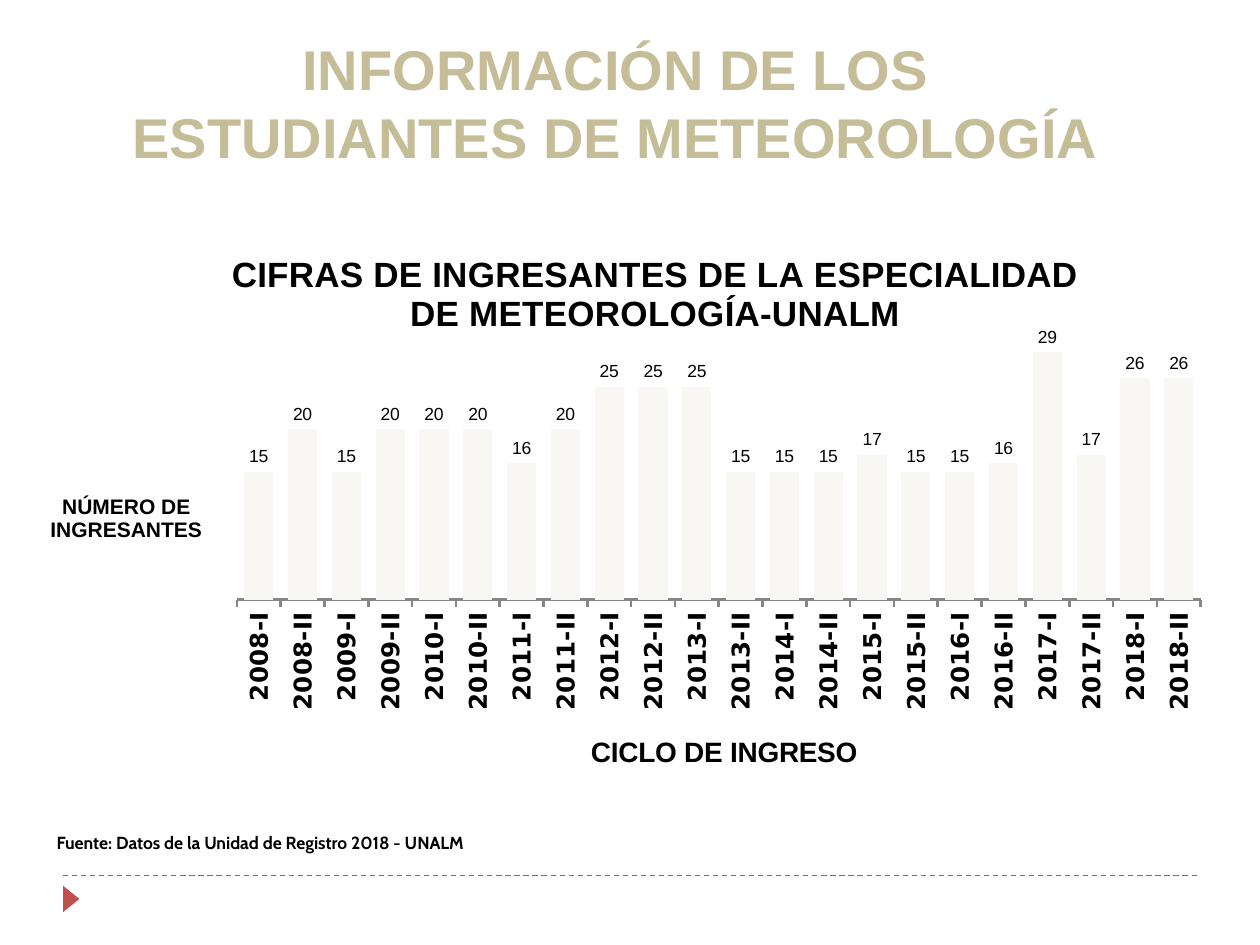
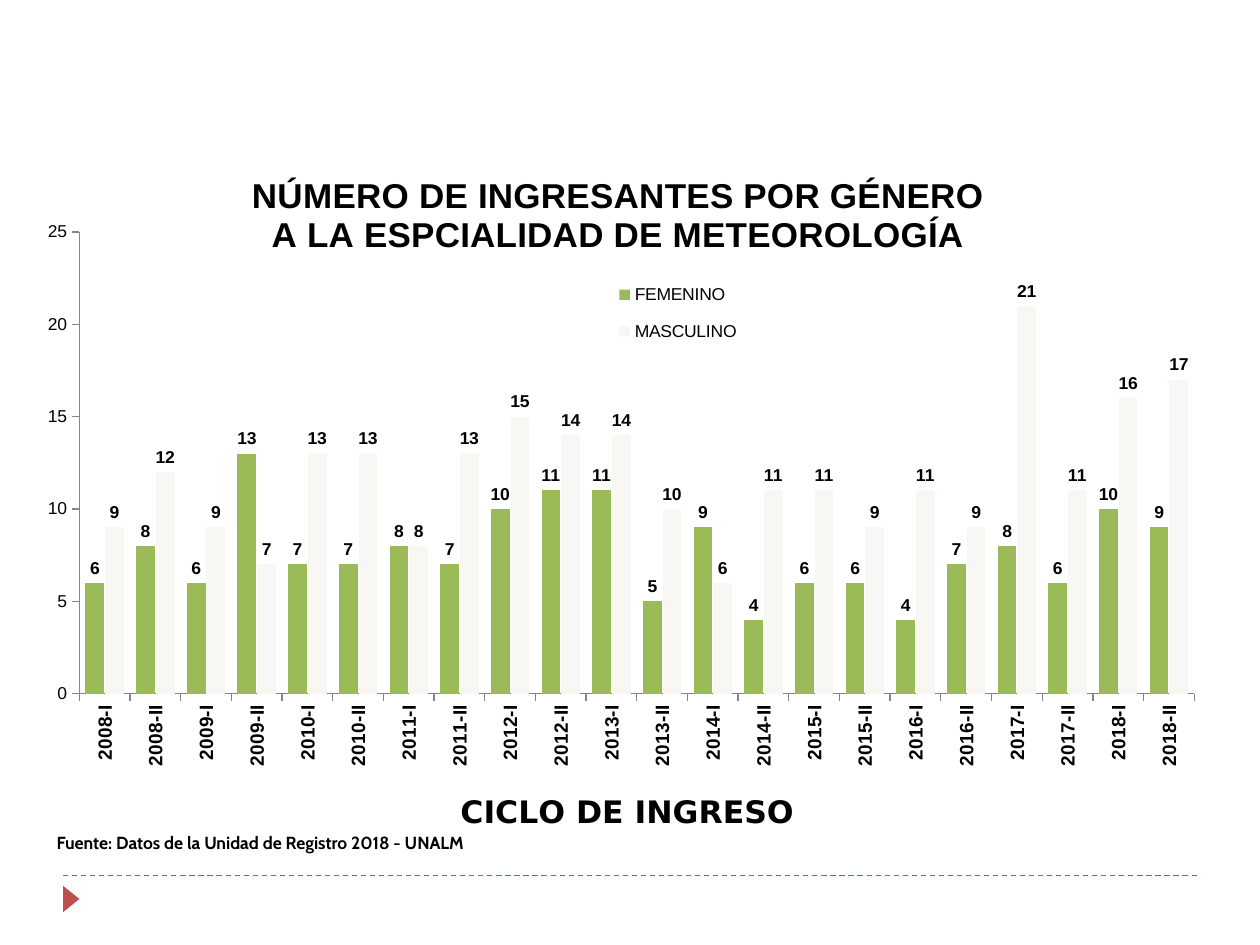
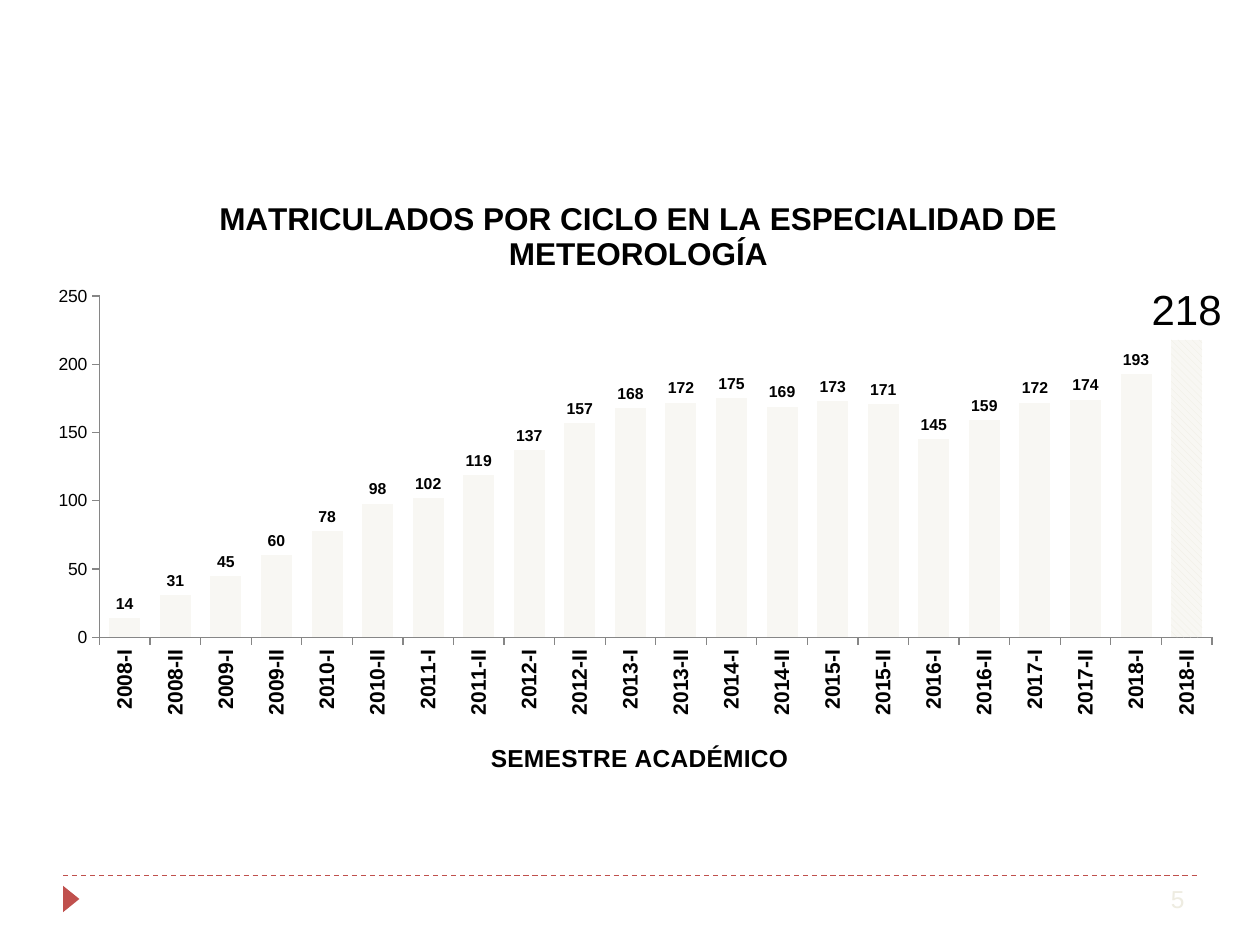
import lxml.etree
import pptx
import pptx.chart.data
import pptx.dml.color
import pptx.enum.chart
import pptx.enum.dml
import pptx.enum.shapes
import pptx.enum.text
import pptx.oxml.ns
import pptx.util

COLS, ROWS = 100, 75
WIDE, HIGH = pptx.util.Inches(10), pptx.util.Inches(7.5)
BLACK, RED, SAND, PALE, GREEN, GREY, CREAM = (
    "000000", "C0504D", "C4BD97", "F8F7F3", "9BBB59", "868686", "EEECE1")
FONT, NOTE, PLAIN = "Arial", "Cabin", "DejaVu Sans"
TERMS = [f"{year}-{half}" for year in range(2008, 2019) for half in ("I", "II")]
SOURCE = "Fuente: Datos de la Unidad de Registro 2018 - UNALM"


def color(code):
    """Turn a hex string into a colour."""
    return pptx.dml.color.RGBColor.from_string(code)


def place(x, y, w, h):
    """Turn grid columns and rows into slide lengths."""
    return [int(WIDE * x / COLS), int(HIGH * y / ROWS),
            int(WIDE * w / COLS), int(HIGH * h / ROWS)]


def style(font, size, bold=False, name=FONT, code=BLACK):
    """Set the looks of a font."""
    font.size, font.bold, font.name = pptx.util.Pt(size), bold, name
    font.color.rgb = color(code)


def write(slide, box, text, align, size, bold=True, name=FONT, code=BLACK):
    """Add a line of text in a box."""
    frame = slide.shapes.add_textbox(*place(*box)).text_frame
    frame.word_wrap = True
    frame.vertical_anchor = pptx.enum.text.MSO_ANCHOR.MIDDLE
    para = frame.paragraphs[0]
    para.text, para.alignment = text, align
    style(para.font, size, bold, name, code)


def footer(slide):
    """Draw the dashed rule and the marker below it."""
    left, top, wide, _ = place(5, 69.5, 90, 0)
    rule = slide.shapes.add_connector(
        pptx.enum.shapes.MSO_CONNECTOR.STRAIGHT, left, top, left + wide, top)
    rule.line.color.rgb = color(RED)
    rule.line.width = pptx.util.Pt(0.75)
    rule.line.dash_style = pptx.enum.dml.MSO_LINE.DASH
    lxml.etree.SubElement(rule._element.spPr, pptx.oxml.ns.qn("a:effectLst"))
    mark = slide.shapes.add_shape(
        pptx.enum.shapes.MSO_SHAPE.ISOSCELES_TRIANGLE, *place(4.6, 70.7, 2.1, 1.3))
    mark.rotation = 90
    mark.shadow.inherit = False
    mark.fill.solid()
    mark.fill.fore_color.rgb = color(RED)
    mark.line.fill.background()


def credit(slide):
    """Write where the data come from."""
    write(slide, (3.5, 65.5, 40.9, 2.7), SOURCE,
          pptx.enum.text.PP_ALIGN.LEFT, 10, name=NOTE)


def arrange(node, index, box, part, inner=False):
    """Pin a chart part at its offset within the chart box."""
    tag = pptx.oxml.ns.qn
    for old in node.findall(tag("c:layout")):
        node.remove(old)
    layout = lxml.etree.Element(tag("c:layout"))
    manual = lxml.etree.SubElement(layout, tag("c:manualLayout"))
    pairs = [("layoutTarget", "inner")] if inner else []
    pairs += [("xMode", "edge"), ("yMode", "edge")]
    sizes = (box[2], box[3], box[2], box[3])
    pairs += [(key, f"{at / size:.4f}") for key, at, size in zip("xywh", part, sizes)]
    for key, value in pairs:
        lxml.etree.SubElement(manual, tag(f"c:{key}")).set("val", value)
    node.insert(index, layout)


def head(owner, box, spot, text, size, name=FONT):
    """Give a chart or an axis its title."""
    title = owner.chart_title if hasattr(owner, "chart_title") else owner.axis_title
    title.text_frame.text = text
    for para in title.text_frame.paragraphs:
        style(para.font, size, True, name)
    arrange(title._element, 1, box, spot)
    return title


def turn(body, angle):
    """Turn the text of a chart part by degrees."""
    body.set("rot", str(angle * 60000))
    body.set("vert", "horz")


def columns(slide, box, plot, series, gap, overlap, top, step, label):
    """Add a column chart with its plot pinned in the box."""
    data = pptx.chart.data.CategoryChartData(number_format="0")
    data.categories = TERMS
    for name, _, values in series:
        data.add_series(name, values)
    chart = slide.shapes.add_chart(
        pptx.enum.chart.XL_CHART_TYPE.COLUMN_CLUSTERED, *place(*box), data).chart
    style(chart.font, 10)
    chart.has_legend = False
    bars = chart.plots[0]
    bars.gap_width, bars.overlap, bars.vary_by_categories = gap, overlap, False
    for item, (_, code, _) in zip(bars.series, series):
        item.format.fill.solid()
        item.format.fill.fore_color.rgb = color(code)
        item.invert_if_negative = False
        tags = item.data_labels
        tags.show_value = True
        tags.position = pptx.enum.chart.XL_LABEL_POSITION.OUTSIDE_END
        style(tags.font, *label)
    scale = chart.value_axis
    scale.minimum_scale, scale.maximum_scale, scale.major_unit = 0, top, step
    scale.has_major_gridlines = False
    for axis in (chart.category_axis, scale):
        axis.major_tick_mark = pptx.enum.chart.XL_TICK_MARK.OUTSIDE
        axis.format.line.color.rgb = color(GREY)
        axis.format.line.width = pptx.util.Pt(0.75)
    arrange(chart._chartSpace.chart.plotArea, 0, box, plot, True)
    return chart


def base(chart, box, spot, text, size, tick, name=FONT, face=FONT):
    """Style the term axis with upright labels and a title."""
    axis = chart.category_axis
    style(axis.tick_labels.font, tick, True, face)
    turn(axis._element.find(".//" + pptx.oxml.ns.qn("a:bodyPr")), -90)
    head(axis, box, spot, text, size, name)


def intake(slide):
    """Show the intake by term."""
    box = (2.5, 17.8, 94.7, 44.5)
    counts = (15, 20, 15, 20, 20, 20, 16, 20, 25, 25, 25,
              15, 15, 15, 17, 15, 15, 16, 29, 17, 26, 26)
    chart = columns(slide, box, (16.3, 9.5, 76.5, 20.3),
                    [("Series 1", PALE, counts)], 50, -24, 30, 5, (10,))
    head(chart, box, (15.6, 2), "CIFRAS DE INGRESANTES DE LA ESPECIALIDAD\n"
         "DE METEOROLOGÍA-UNALM", 20)
    base(chart, box, (44, 40.1), "CICLO DE INGRESO", 16, 14, face=PLAIN)
    chart.category_axis.format.line.width = pptx.util.Pt(1.5)
    scale = chart.value_axis
    scale.major_tick_mark = pptx.enum.chart.XL_TICK_MARK.NONE
    scale.tick_label_position = pptx.enum.chart.XL_TICK_LABEL_POSITION.NONE
    scale.format.line.fill.background()
    title = head(scale, box, (1.2, 21.1), "NÚMERO DE\nINGRESANTES", 12)
    turn(title.text_frame._txBody.bodyPr, 0)
    credit(slide)
    write(slide, (9.1, 2.2, 79.5, 11.8),
          "INFORMACIÓN DE LOS ESTUDIANTES DE METEOROLOGÍA",
          pptx.enum.text.PP_ALIGN.CENTER, 32, code=SAND)


def gender(slide):
    """Show the intake by gender."""
    box = (2.8, 13.1, 95.3, 53.6)
    women = (6, 8, 6, 13, 7, 7, 8, 7, 10, 11, 11, 5, 9, 4, 6, 6, 4, 7, 8, 6, 10, 9)
    men = (9, 12, 9, 7, 13, 13, 8, 13, 15, 14, 14,
           10, 6, 11, 11, 9, 11, 9, 21, 11, 16, 17)
    chart = columns(slide, box, (3.5, 5.4, 88.5, 37.3),
                    [("FEMENINO", GREEN, women), ("MASCULINO", PALE, men)],
                    65, -5, 25, 5, (10, True))
    head(chart, box, (16.9, 0.5), "NÚMERO DE INGRESANTES POR GÉNERO\n"
         "A LA ESPCIALIDAD DE METEOROLOGÍA", 20)
    base(chart, box, (33.3, 50.1), "CICLO DE INGRESO", 18, 11, PLAIN)
    chart.has_legend = True
    chart.legend.position = pptx.enum.chart.XL_LEGEND_POSITION.RIGHT
    chart.legend.include_in_layout = False
    style(chart.legend.font, 10)
    arrange(chart.legend._element, 1, box, (45, 8.3, 12, 7.3))
    credit(slide)


def enrol(slide):
    """Show the enrolment by term and mark the last one."""
    box = (2.8, 13.1, 95.3, 49.6)
    counts = (14, 31, 45, 60, 78, 98, 102, 119, 137, 157, 168,
              172, 175, 169, 173, 171, 145, 159, 172, 174, 193, 218)
    chart = columns(slide, box, (5.1, 10.4, 88.3, 27.1),
                    [("Series 1", PALE, counts)], 63, 13, 250, 50, (9, True))
    head(chart, box, (14.3, 2.4), "MATRICULADOS POR CICLO EN LA ESPECIALIDAD DE\n"
         "METEOROLOGÍA", 18)
    base(chart, box, (35.8, 45.5), "SEMESTRE ACADÉMICO", 14, 12)
    last = chart.plots[0].series[0].points[len(TERMS) - 1]
    fill = last.format.fill
    fill.patterned()
    fill.pattern = pptx.enum.dml.MSO_PATTERN.WIDE_DOWNWARD_DIAGONAL
    fill.fore_color.rgb, fill.back_color.rgb = color(CREAM), color(PALE)
    style(last.data_label.font, 24)
    last.data_label.position = pptx.enum.chart.XL_LABEL_POSITION.OUTSIDE_END
    write(slide, (85, 69.3, 10, 4), "5",
          pptx.enum.text.PP_ALIGN.RIGHT, 14, False, code=CREAM)


def main():
    """Build the slides and save them."""
    deck = pptx.Presentation()
    deck.slide_width, deck.slide_height = WIDE, HIGH
    for build in (intake, gender, enrol):
        slide = deck.slides.add_slide(deck.slide_layouts[6])
        footer(slide)
        build(slide)
    deck.save("out.pptx")


if __name__ == "__main__":
    main()
